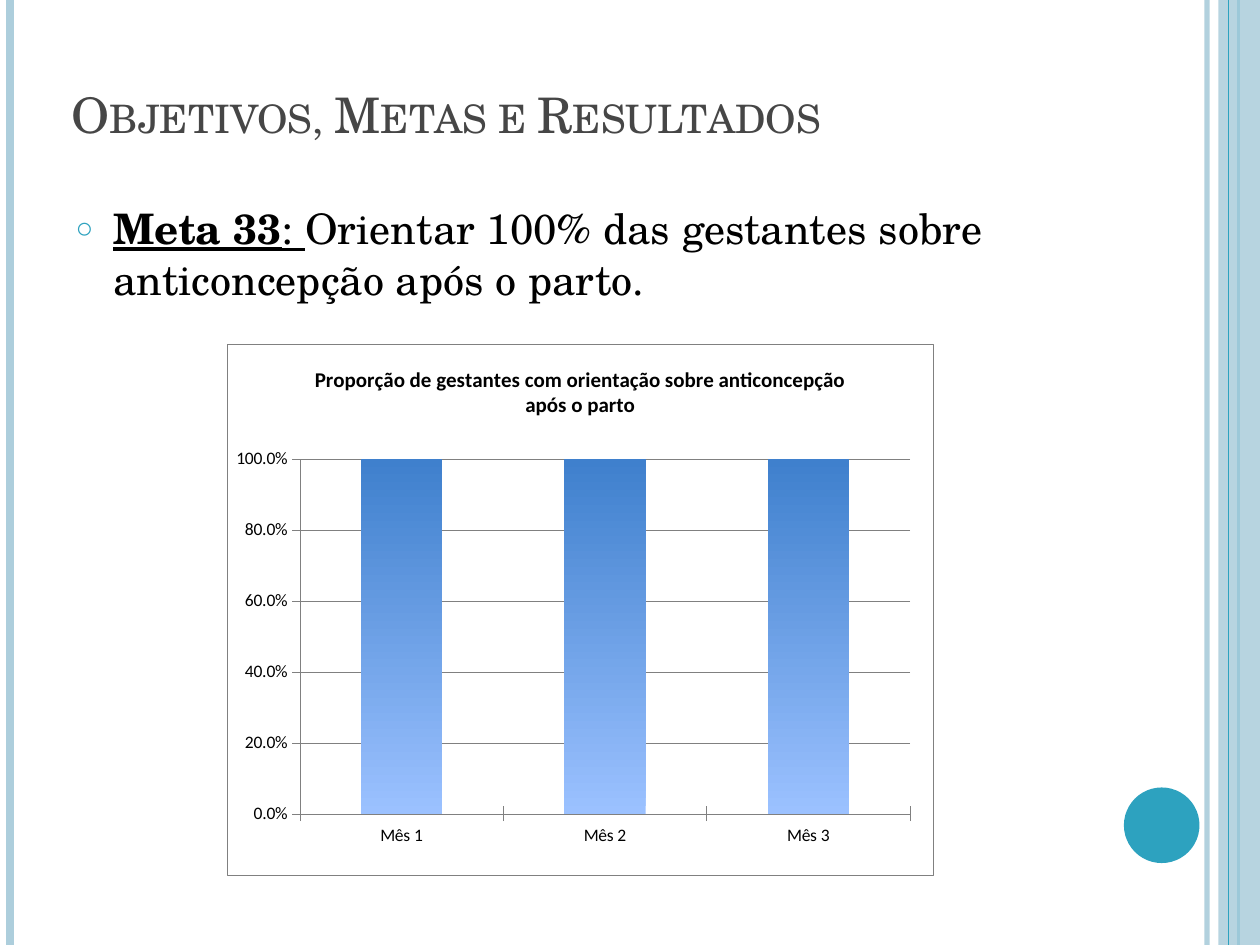
from lxml import etree
from pptx import Presentation
from pptx.chart.data import CategoryChartData
from pptx.dml.color import RGBColor
from pptx.enum.chart import XL_CHART_TYPE, XL_TICK_MARK
from pptx.enum.shapes import MSO_CONNECTOR, MSO_SHAPE
from pptx.enum.text import MSO_ANCHOR, PP_ALIGN
from pptx.oxml import parse_xml
from pptx.oxml.ns import nsdecls, qn
from pptx.util import Inches, Pt

COLUMNS = XL_CHART_TYPE.COLUMN_CLUSTERED
STRAIGHT = MSO_CONNECTOR.STRAIGHT
RECTANGLE, OVAL = MSO_SHAPE.RECTANGLE, MSO_SHAPE.OVAL
BOTTOM, TOP, LEFT = MSO_ANCHOR.BOTTOM, MSO_ANCHOR.TOP, PP_ALIGN.LEFT
CROSS = XL_TICK_MARK.CROSS

SERIF, SANS = "TeX Gyre Schola", "Calibri"
TEAL, PALE, GRAY, BLACK = "2DA2BF", "ADCEDC", "808080", "000000"
WIDTH, HEIGHT = 10, 7.5

TITLE = "Objetivos, Metas e Resultados"
GOAL = [
    ("Meta 33", {"bold": True, "underline": True}),
    (": ", {"underline": True}),
    ("Orientar 100% das gestantes sobre anticoncepção após o parto.", {}),
]
CHART_TITLE = "Proporção de gestantes com orientação sobre anticoncepção após o parto"
MONTHS = {"Mês 1": 1, "Mês 2": 1, "Mês 3": 1}
BAR_GRADIENT = ["9BC1FF", "3F80CD"]
PLOT_LAYOUT = {"x": 0.103, "y": 0.216, "w": 0.864, "h": 0.668}

TITLE_BOX = (0.47, 0.55, 8.17, 0.64)
BODY_BOX = (0.5, 1.56, 8.17, 5.52)
CHART_BOX = (1.8, 2.73, 5.61, 4.22)
RULES = [(9.58, PALE, 3, 93), (0.08, PALE, 4.5, 100), (9.83, TEAL, 1.5, 100)]
BAND = (RECTANGLE, (9.67, 0, 0.33, HEIGHT), PALE, 87)
THIN_RULE = (9.75, TEAL, 0.75, 100)
DISC = (OVAL, (8.92, 6.25, 0.6, 0.6), TEAL, 100)


def color(value):
    """Turn a hex string into a colour."""
    return RGBColor.from_string(value)


def box(values):
    """Convert a row of numbers to inches."""
    return [Inches(value) for value in values]


def set_alpha(element, percent):
    """Make the first colour under an element partly transparent."""
    if percent < 100:
        target = next(element.iter(qn("a:srgbClr")))
        etree.SubElement(target, qn("a:alpha"), val=str(percent * 1000))


def format_font(font, size, name, hue=BLACK, bold=False, underline=False):
    """Set the look of a font."""
    font.size, font.name = Pt(size), name
    font.bold, font.underline = bold, underline
    font.color.rgb = color(hue)


def add_text(paragraph, text, size=24, name=SERIF, small_caps=False, **style):
    """Add a formatted run to a paragraph."""
    run = paragraph.add_run()
    run.text = text
    format_font(run.font, size, name, **style)
    if small_caps:
        run.font._element.set("cap", "small")


def add_rule(slide, x, hue, weight, alpha):
    """Draw a vertical line over the full height of the slide."""
    rule = slide.shapes.add_connector(STRAIGHT, *box((x, 0, x, HEIGHT)))
    rule.line.color.rgb = color(hue)
    rule.line.width = Pt(weight)
    properties = rule._element.spPr
    set_alpha(properties, alpha)
    etree.SubElement(properties, qn("a:effectLst"))


def add_block(slide, kind, place, hue, alpha):
    """Draw a filled shape without an outline."""
    shape = slide.shapes.add_shape(kind, *box(place))
    shape.shadow.inherit = False
    shape.fill.solid()
    shape.fill.fore_color.rgb = color(hue)
    shape.line.fill.background()
    set_alpha(shape._element.spPr, alpha)


def place_placeholder(slide, shape, place, anchor):
    """Bring a placeholder to the front, position it and return its paragraph."""
    slide.shapes._spTree.append(shape._element)
    shape.left, shape.top, shape.width, shape.height = box(place)
    shape.text_frame.vertical_anchor = anchor
    paragraph = shape.text_frame.paragraphs[0]
    paragraph.alignment = LEFT
    return paragraph


def add_bullet(paragraph, character, hue, percent, indent):
    """Give a paragraph a hanging bullet."""
    properties = paragraph._element.get_or_add_pPr()
    properties.set("marL", str(Inches(indent)))
    properties.set("indent", str(-Inches(indent)))
    bullet_color = etree.SubElement(properties, qn("a:buClr"))
    etree.SubElement(bullet_color, qn("a:srgbClr"), val=hue)
    etree.SubElement(properties, qn("a:buSzPct"), val=str(percent * 1000))
    etree.SubElement(properties, qn("a:buChar"), char=character)


def area_properties(border):
    """Build a white chart area with the given outline."""
    return parse_xml(
        f'<c:spPr {nsdecls("c", "a")}><a:solidFill><a:srgbClr val="FFFFFF"/></a:solidFill>'
        f"{border}</c:spPr>"
    )


def format_line(line):
    """Make a thin gray chart line."""
    line.color.rgb = color(GRAY)
    line.width = Pt(0.25)


def format_areas(chart):
    """Set the chart border, its background and the plot position."""
    chart_space = chart._chartSpace
    border = f'<a:ln w="{Pt(0.25)}"><a:solidFill><a:srgbClr val="{GRAY}"/></a:solidFill></a:ln>'
    chart_space.find(qn("c:chart")).addnext(area_properties(border))
    plot_area = next(chart_space.iter(qn("c:plotArea")))
    plot_area.append(area_properties("<a:ln><a:noFill/></a:ln>"))
    for layout in plot_area.findall(qn("c:layout")):
        plot_area.remove(layout)
    layout = etree.Element(qn("c:layout"))
    manual = etree.SubElement(layout, qn("c:manualLayout"))
    modes = {"layoutTarget": "inner", "xMode": "edge", "yMode": "edge"}
    for tag, value in {**modes, **PLOT_LAYOUT}.items():
        etree.SubElement(manual, qn(f"c:{tag}"), val=str(value))
    plot_area.insert(0, layout)


def add_month_chart(slide):
    """Add the column chart of monthly proportions."""
    data = CategoryChartData(number_format="0.0%")
    data.categories = list(MONTHS)
    data.add_series(CHART_TITLE, list(MONTHS.values()))
    chart = slide.shapes.add_chart(COLUMNS, *box(CHART_BOX), data).chart
    format_font(chart.font, 10, SANS)
    chart.has_legend = False
    chart.has_title = True
    heading = chart.chart_title.text_frame.paragraphs[0]
    add_text(heading, CHART_TITLE, size=12, name=SANS, bold=True)
    chart.chart_title.include_in_layout = False

    for axis in (chart.category_axis, chart.value_axis):
        axis.major_tick_mark = CROSS
        format_font(axis.tick_labels.font, 10, SANS)
        format_line(axis.format.line)
    scale = chart.value_axis
    scale.minimum_scale, scale.maximum_scale, scale.major_unit = 0, 1, 0.2
    scale.tick_labels.number_format = "0.0%"
    scale.tick_labels.number_format_is_linked = False
    format_line(scale.major_gridlines.format.line)

    plot = chart.plots[0]
    plot.gap_width, plot.vary_by_categories = 150, False
    fill = plot.series[0].format.fill
    fill.gradient()
    fill.gradient_angle = 90
    for stop, hue in zip(fill.gradient_stops, BAR_GRADIENT):
        stop.color.rgb = color(hue)
    format_areas(chart)


def main():
    """Build and save the slide."""
    presentation = Presentation()
    presentation.slide_width, presentation.slide_height = Inches(WIDTH), Inches(HEIGHT)
    slide = presentation.slides.add_slide(presentation.slide_layouts[1])
    for rule in RULES:
        add_rule(slide, *rule)
    add_block(slide, *BAND)
    add_rule(slide, *THIN_RULE)
    add_block(slide, *DISC)

    goal = place_placeholder(slide, slide.placeholders[1], BODY_BOX, TOP)
    goal.space_before = Pt(6)
    add_bullet(goal, "○", TEAL, 70, 0.3)
    for text, style in GOAL:
        add_text(goal, text, **style)
    title = place_placeholder(slide, slide.shapes.title, TITLE_BOX, BOTTOM)
    add_text(title, TITLE, size=28, hue="464646", small_caps=True)
    add_month_chart(slide)
    presentation.save("out.pptx")


if __name__ == "__main__":
    main()
